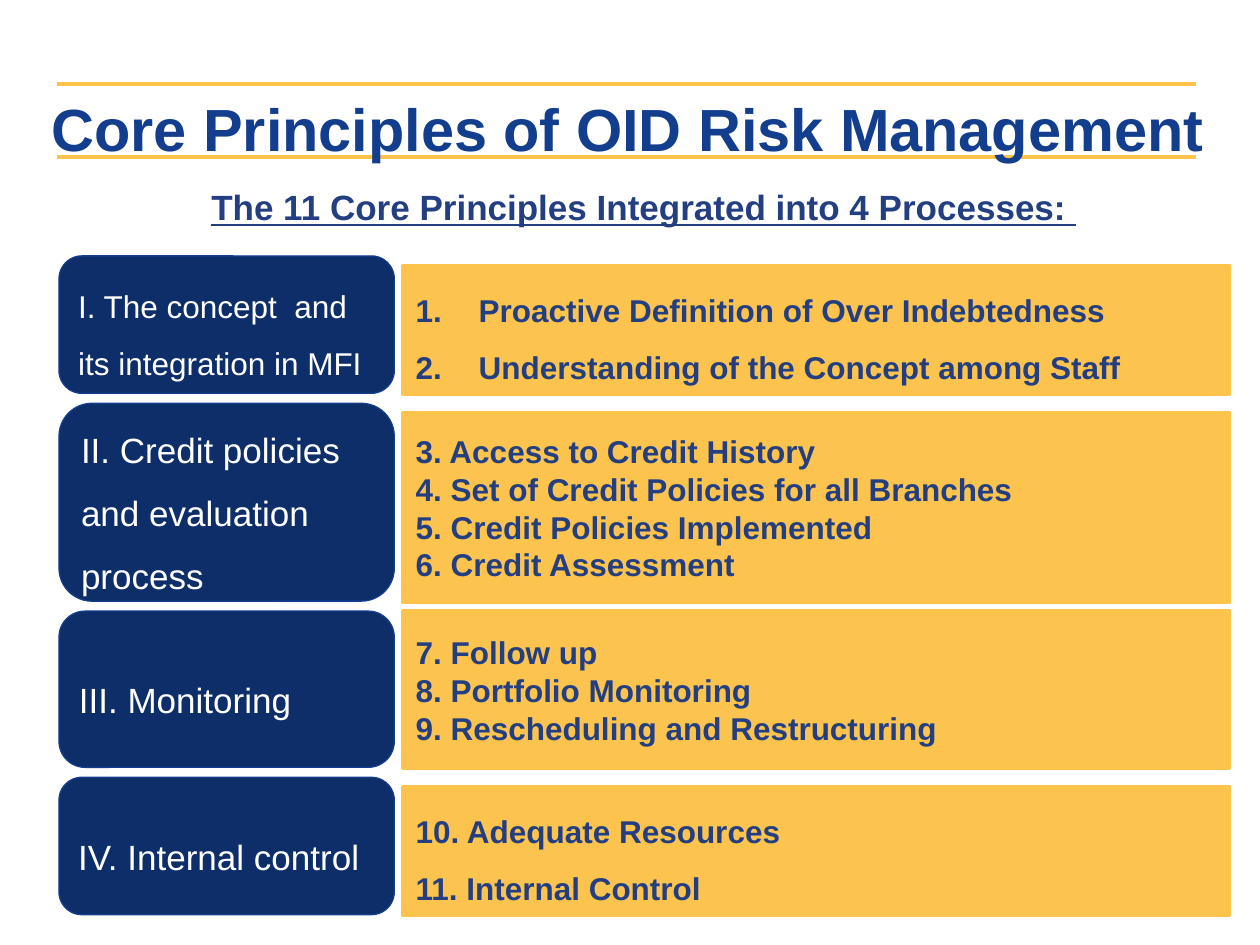
from pptx import Presentation
from pptx.dml.color import RGBColor
from pptx.enum.shapes import MSO_CONNECTOR, MSO_SHAPE
from pptx.enum.text import MSO_ANCHOR, PP_ALIGN
from pptx.oxml.ns import qn
from pptx.util import Cm, Pt
from lxml.etree import SubElement

COLORS = {
    "title": "133D8D",
    "label": "0E2E6A",
    "text": "243F81",
    "panel": "FCC44E",
    "rule": "FEC34B",
    "white": "FFFFFF",
}

# Each process: label, label size, height, panel offset, principles, panel style
PROCESSES = [
    {"label": "I. The concept  and its integration in MFI", "size": 18,
     "height": 2.77, "offset": 0.2, "spacing": 1.5, "numbered": True,
     "principles": ["Proactive Definition of Over Indebtedness",
                    "Understanding of the Concept among Staff"]},
    {"label": "II. Credit policies and evaluation process", "size": 20,
     "height": 3.99, "offset": 0.2, "spacing": 1.0, "numbered": False,
     "principles": ["3. Access to Credit History",
                    "4. Set of Credit Policies for all Branches",
                    "5. Credit Policies Implemented",
                    "6. Credit Assessment"]},
    {"label": "III. Monitoring", "size": 20,
     "height": 3.15, "offset": 0, "spacing": 1.0, "numbered": False,
     "principles": ["7. Follow up",
                    "8. Portfolio Monitoring",
                    "9. Rescheduling and Restructuring"]},
    {"label": "IV. Internal control", "size": 20,
     "height": 2.77, "offset": 0.2, "spacing": 1.5, "numbered": False,
     "principles": ["10. Adequate Resources", "11. Internal Control"]},
]


def color(name):
    return RGBColor.from_string(COLORS[name])


def write(frame, lines, size, color_name, bold=False, spacing=1.0):
    frame.word_wrap = True
    for index, line in enumerate(lines):
        paragraph = frame.add_paragraph() if index else frame.paragraphs[0]
        paragraph.text = line
        paragraph.alignment = PP_ALIGN.LEFT
        paragraph.line_spacing = spacing
        paragraph.font.name = "Arial"
        paragraph.font.size = Pt(size)
        paragraph.font.bold = bold
        paragraph.font.color.rgb = color(color_name)


def number(paragraph):
    properties = paragraph._p.get_or_add_pPr()
    properties.set("marL", str(Cm(1.27)))
    properties.set("indent", str(-Cm(1.27)))
    SubElement(properties, qn("a:buFont"), typeface="Arial")
    SubElement(properties, qn("a:buAutoNum"), type="arabicPeriod")


def add_block(slide, kind, left, top, width, height, fill, line, line_width):
    shape = slide.shapes.add_shape(kind, Cm(left), Cm(top), Cm(width), Cm(height))
    shape.shadow.inherit = False
    shape.fill.solid()
    shape.fill.fore_color.rgb = color(fill)
    shape.line.color.rgb = color(line)
    shape.line.width = Pt(line_width)
    return shape


def add_header(slide, left, top, width, height):
    # Rules above and below the title
    for y in (top, top + height):
        rule = slide.shapes.add_connector(
            MSO_CONNECTOR.STRAIGHT, Cm(left), Cm(y), Cm(left + width), Cm(y))
        rule.line.color.rgb = color("rule")
        rule.line.width = Pt(2.25)
        SubElement(rule._element.spPr, qn("a:effectLst"))

    # Title
    title = slide.shapes.add_textbox(
        Cm(left - 0.2), Cm(top - 0.06), Cm(width + 1.5), Cm(2.08))
    frame = title.text_frame
    frame.margin_left = frame.margin_right = frame.margin_bottom = Cm(0.1)
    frame.margin_top = Cm(0.23)
    write(frame, ["Core Principles of OID Risk Management"], 34, "title", bold=True)


def add_subtitle(slide, left, top, width, height):
    box = slide.shapes.add_textbox(Cm(left), Cm(top), Cm(width), Cm(height))
    write(box.text_frame, ["The 11 Core Principles Integrated into 4 Processes: "],
          20, "text", bold=True, spacing=1.5)
    box.text_frame.paragraphs[0].font.underline = True


def add_process(slide, process, left, top, width):
    label_width, panel_left = 6.76, 6.94
    height, offset = process["height"], process["offset"]

    # Process label
    label = add_block(slide, MSO_SHAPE.ROUNDED_RECTANGLE, left, top,
                      label_width, height, "label", "title", 0.75)
    label.text_frame.vertical_anchor = MSO_ANCHOR.MIDDLE
    write(label.text_frame, [process["label"]], process["size"], "white", spacing=1.5)

    # Principles panel
    panel = add_block(slide, MSO_SHAPE.RECTANGLE, left + panel_left, top + offset,
                      width - panel_left, height - offset + 0.02, "panel", "rule", 2)
    spacing = process["spacing"]
    panel.text_frame.vertical_anchor = (
        MSO_ANCHOR.TOP if spacing > 1 else MSO_ANCHOR.MIDDLE)
    write(panel.text_frame, process["principles"], 18, "text", bold=True, spacing=spacing)
    if process["numbered"]:
        for paragraph in panel.text_frame.paragraphs:
            number(paragraph)


def add_processes(slide, left, top, width, gap):
    for process in PROCESSES:
        add_process(slide, process, left, top, width)
        top += process["height"] + gap


def main():
    presentation = Presentation()
    presentation.slide_width = Cm(25.4)
    presentation.slide_height = Cm(19.05)
    slide = presentation.slides.add_slide(presentation.slide_layouts[6])
    add_header(slide, 1.14, 1.69, 22.96, 1.48)
    add_subtitle(slide, 4.01, 3.2, 20.52, 1.47)
    add_processes(slide, 1.19, 5.16, 23.6, 0.2)
    presentation.save("out.pptx")


if __name__ == "__main__":
    main()
